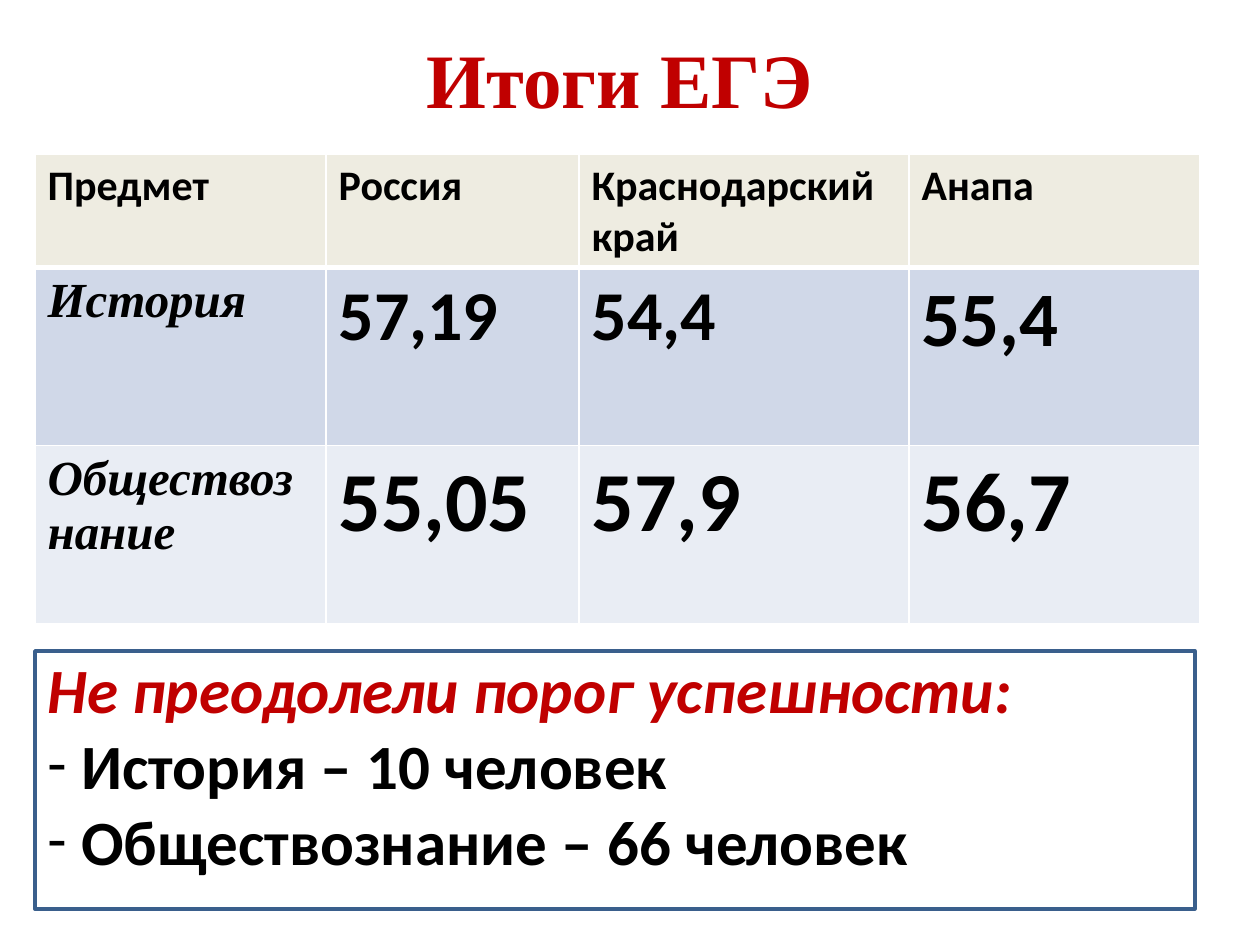
"""Builds the exam results slide with a score table and a summary box."""
import pptx
import pptx.dml.color
import pptx.enum.shapes
import pptx.enum.text
import pptx.oxml
import pptx.oxml.ns
import pptx.util

PX_PER_INCH = 126
SERIF = "Times New Roman"
SANS = "Calibri"
RED = "C00000"
BLACK = "000000"
WHITE = "FFFFFF"
COLUMN_WIDTHS = [291, 253, 330, 291]
ROW_HEIGHTS = [113, 178, 178]
ROW_FILLS = ["EEECE1", "D0D8E8", "E9EDF4"]
SCORES = [
    [("Предмет", 24), ("Россия", 24), ("Краснодарский край", 24), ("Анапа", 24)],
    [("История", 28), ("57,19", 40), ("54,4", 40), ("55,4", 44)],
    [("Обществознание", 28), ("55,05", 48), ("57,9", 48), ("56,7", 48)],
]
FAILURES = ["История – 10 человек", "Обществознание – 66 человек"]


def px(length):
    return pptx.util.Emu(round(length * 914400 / PX_PER_INCH))


def color(value):
    return pptx.dml.color.RGBColor.from_string(value)


def paint(part, value):
    part.fill.solid()
    part.fill.fore_color.rgb = color(value)


def write(paragraph, text, size, font=SANS, ink=BLACK, italic=False):
    paragraph.text = text
    for run in paragraph.runs:
        run.font.name = font
        run.font.size = pptx.util.Pt(size)
        run.font.bold = True
        run.font.italic = italic
        run.font.color.rgb = color(ink)


def add_dash(paragraph, indent):
    properties = paragraph._p.get_or_add_pPr()
    properties.set("marL", str(indent))
    properties.set("indent", str(-indent))
    namespace = pptx.oxml.ns.nsdecls("a")
    for bullet in (f'<a:buFont {namespace} typeface="{SANS}"/>',
                   f'<a:buChar {namespace} char="-"/>'):
        properties.append(pptx.oxml.parse_xml(bullet))


def set_borders(cell, bottom_width):
    properties = cell._tc.get_or_add_tcPr()
    widths = {"lnL": 1, "lnR": 1, "lnT": 1, "lnB": bottom_width}
    for position, (side, width) in enumerate(widths.items()):
        properties.insert(position, pptx.oxml.parse_xml(
            f'<a:{side} {pptx.oxml.ns.nsdecls("a")} w="{pptx.util.Pt(width)}">'
            f'<a:solidFill><a:srgbClr val="{WHITE}"/></a:solidFill></a:{side}>'))


def add_title(slide, text):
    title = slide.shapes.add_textbox(px(53), px(0), px(1134), px(155))
    title.text_frame.word_wrap = True
    title.text_frame.vertical_anchor = pptx.enum.text.MSO_ANCHOR.MIDDLE
    heading = title.text_frame.paragraphs[0]
    heading.alignment = pptx.enum.text.PP_ALIGN.CENTER
    write(heading, text, 44, SERIF, RED)


def add_scores(slide):
    scores = slide.shapes.add_table(
        len(SCORES), len(COLUMN_WIDTHS), px(35), px(154),
        px(sum(COLUMN_WIDTHS)), px(sum(ROW_HEIGHTS))).table
    for column, width in zip(scores.columns, COLUMN_WIDTHS):
        column.width = px(width)
    for row, height in zip(scores.rows, ROW_HEIGHTS):
        row.height = px(height)
    for r, entries in enumerate(SCORES):
        for c, (text, size) in enumerate(entries):
            cell = scores.cell(r, c)
            is_subject = r > 0 and c == 0
            write(cell.text_frame.paragraphs[0], text, size,
                  SERIF if is_subject else SANS, italic=is_subject)
            paint(cell, ROW_FILLS[r])
            set_borders(cell, 3 if r == 0 else 1)


def add_failures(slide):
    summary = slide.shapes.add_shape(
        pptx.enum.shapes.MSO_SHAPE.RECTANGLE, px(35), px(651), px(1160), px(258))
    summary.shadow.inherit = False
    paint(summary, WHITE)
    summary.line.color.rgb = color("3A5F8C")
    summary.line.width = pptx.util.Pt(2)
    frame = summary.text_frame
    frame.word_wrap = True
    frame.vertical_anchor = pptx.enum.text.MSO_ANCHOR.TOP
    frame.margin_top = 0
    write(frame.paragraphs[0], "Не преодолели порог успешности:", 36,
          ink=RED, italic=True)
    for failure in FAILURES:
        write(frame.add_paragraph(), failure, 36)
    for paragraph in frame.paragraphs:
        paragraph.alignment = pptx.enum.text.PP_ALIGN.LEFT
    for paragraph in frame.paragraphs[1:]:
        add_dash(paragraph, px(34))


def main():
    presentation = pptx.Presentation()
    presentation.slide_width = px(1260)
    presentation.slide_height = px(945)
    slide = presentation.slides.add_slide(presentation.slide_layouts[6])
    add_title(slide, "Итоги ЕГЭ")
    add_scores(slide)
    add_failures(slide)
    presentation.save("out.pptx")


if __name__ == "__main__":
    main()
